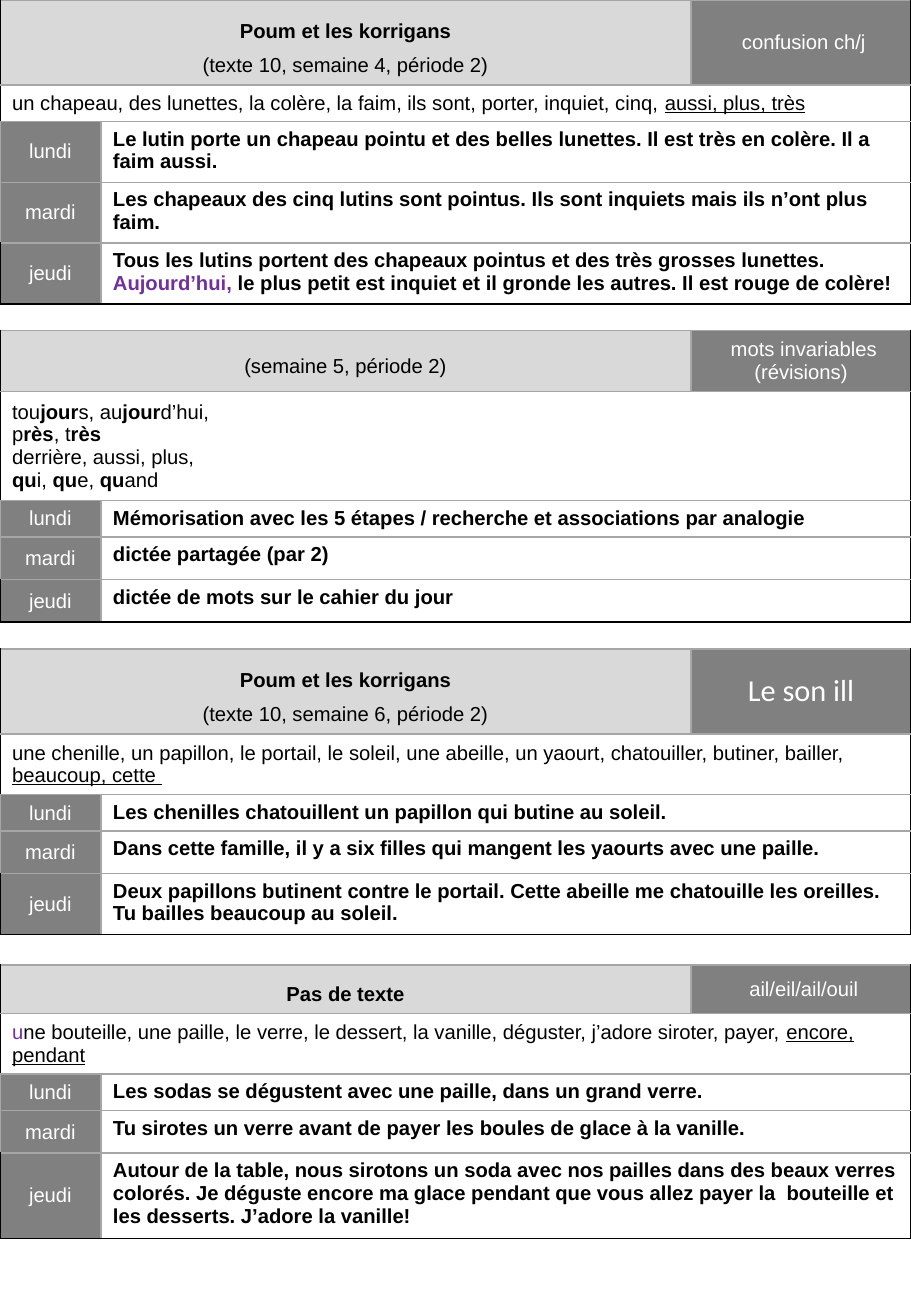
import dataclasses

import lxml.etree
import pptx
import pptx.dml.color
import pptx.enum.text
import pptx.oxml.ns
import pptx.util

Inches = pptx.util.Inches
Pt = pptx.util.Pt


@dataclasses.dataclass(frozen=True)
class Theme:
    black: str = "000000"
    white: str = "FFFFFF"
    light: str = "D9D9D9"
    dark: str = "808080"
    rule: str = "A6A6A6"
    accent: str = "7030A0"
    font: str = "Arial"
    size: int = 12
    sound_font: str = "Calibri"
    sound_size: int = 18
    rule_width: int = 1


THEME = Theme()
DAYS = ("lundi", "mardi", "jeudi")
COLUMNS = (0.83, 4.86, 1.81)
BOLD, UNDERLINE, ACCENT = "bold", "underline", "accent"

# -- 
WEEKS = [
    {
        "top": 0,
        "rows": (0.7, 0.3, 0.5, 0.5, 0.5),
        "title": [[("Poum et les korrigans", BOLD)], "(texte 10, semaine 4, période 2)"],
        "topic": [" confusion ch/j"],
        "words": [[
            "un chapeau, des lunettes, la colère, la faim, ils sont, porter, inquiet, cinq, ",
            ("aussi, plus, très", UNDERLINE),
        ]],
        "dictations": [
            "Le lutin porte un chapeau pointu et des belles lunettes. Il est très en colère. Il a faim aussi.",
            "Les chapeaux des cinq lutins sont pointus. Ils sont inquiets mais ils n’ont plus faim.",
            [
                "Tous les lutins portent des chapeaux pointus et des très grosses lunettes. ",
                ("Aujourd’hui,", ACCENT),
                " le plus petit est inquiet et il gronde les autres. Il est rouge de colère!",
            ],
        ],
    },
    {
        "top": 2.72,
        "rows": (0.5, 0.9, 0.3, 0.35, 0.35),
        "title": ["(semaine 5, période 2)"],
        "topic": [" mots invariables", "(révisions)"],
        "words": [
            ["tou", ("jour", BOLD), "s, au", ("jour", BOLD), "d’hui,"],
            ["p", ("rès", BOLD), ", t", ("rès", BOLD)],
            "derrière, aussi, plus,",
            [("qu", BOLD), "i, ", ("qu", BOLD), "e, ", ("qu", BOLD), "and"],
        ],
        "dictations": [
            "Mémorisation avec les 5 étapes / recherche et associations par analogie",
            "dictée partagée (par 2)",
            "dictée de mots sur le cahier du jour",
        ],
    },
    {
        "top": 5.34,
        "rows": (0.7, 0.5, 0.3, 0.35, 0.5),
        "title": [[("Poum et les korrigans", BOLD)], "(texte 10, semaine 6, période 2)"],
        "topic": ["Le son ill"],
        "topic_font": (THEME.sound_font, THEME.sound_size),
        "words": [[
            "une chenille, un papillon, le portail, le soleil, une abeille, un yaourt, chatouiller, butiner, bailler, ",
            ("beaucoup, cette ", UNDERLINE),
        ]],
        "dictations": [
            "Les chenilles chatouillent un papillon qui butine au soleil.",
            "Dans cette famille, il y a six filles qui mangent les yaourts avec une paille.",
            "Deux papillons butinent contre le portail. Cette abeille me chatouille les oreilles. "
            "Tu bailles beaucoup au soleil.",
        ],
    },
    {
        "top": 7.94,
        "rows": (0.4, 0.5, 0.3, 0.35, 0.7),
        "title": [[("Pas de texte", BOLD)]],
        "topic": [" ail/eil/ail/ouil"],
        "words": [[
            ("u", ACCENT),
            "ne bouteille, une paille, le verre, le dessert, la vanille, déguster, j’adore siroter, payer, ",
            ("encore, pendant", UNDERLINE),
        ]],
        "dictations": [
            "Les sodas se dégustent avec une paille, dans un grand verre.",
            "Tu sirotes un verre avant de payer les boules de glace à la vanille.",
            "Autour de la table, nous sirotons un soda avec nos pailles dans des beaux verres colorés. "
            "Je déguste encore ma glace pendant que vous allez payer la  bouteille et les desserts. "
            "J’adore la vanille!",
        ],
    },
]


def rgb(color):
    return pptx.dml.color.RGBColor.from_string(color)


def add_border(cell, side, color):
    qn = pptx.oxml.ns.qn
    properties = cell._tc.get_or_add_tcPr()
    line = lxml.etree.SubElement(properties, qn(f"a:ln{side}"), w=str(Pt(THEME.rule_width)))
    fill = lxml.etree.SubElement(line, qn("a:solidFill"))
    lxml.etree.SubElement(fill, qn("a:srgbClr"), val=color)


def write_lines(cell, lines, color, bold, centred, spacing, font):
    for index, line in enumerate(lines):
        frame = cell.text_frame
        paragraph = frame.add_paragraph() if index else frame.paragraphs[0]
        paragraph.font.name, paragraph.font.size = font[0], Pt(font[1])
        paragraph.font.bold = bold
        paragraph.font.color.rgb = rgb(color)
        paragraph.line_spacing = spacing
        if centred:
            paragraph.alignment = pptx.enum.text.PP_ALIGN.CENTER
        for part in [line] if isinstance(line, str) else line:
            text, style = (part, None) if isinstance(part, str) else part
            run = paragraph.add_run()
            run.text = text
            if style == BOLD:
                run.font.bold = True
            elif style == UNDERLINE:
                run.font.underline = True
            elif style == ACCENT:
                run.font.color.rgb = rgb(THEME.accent)


def fill_block(table, row, first, last, lines, fill, color=THEME.black, bold=False,
               centred=False, spacing=1.0, top_anchored=False, font=(THEME.font, THEME.size)):
    origin = table.cell(row, first)
    if last > first:
        origin.merge(table.cell(row, last))
    edges = {
        "L": first == 0 and (row < 2 or row == len(table.rows) - 1),
        "R": last == len(COLUMNS) - 1,
        "T": False,
        "B": row == len(table.rows) - 1,
    }
    for column in range(first, last + 1):
        cell = table.cell(row, column)
        for side, outer in edges.items():
            add_border(cell, side, THEME.black if outer else THEME.rule)
        cell.fill.solid()
        cell.fill.fore_color.rgb = rgb(fill)
    anchors = pptx.enum.text.MSO_ANCHOR
    origin.vertical_anchor = anchors.TOP if top_anchored else anchors.MIDDLE
    write_lines(origin, lines, color, bold, centred, spacing, font)


def add_week(slide, week):
    heights = week["rows"]
    table = slide.shapes.add_table(
        len(heights), len(COLUMNS), 0, Inches(week["top"]),
        Inches(sum(COLUMNS)), Inches(sum(heights))).table
    table.first_row = table.horz_banding = False
    for column, width in zip(table.columns, COLUMNS):
        column.width = Inches(width)
    for row, height in zip(table.rows, heights):
        row.height = Inches(height)
    fill_block(table, 0, 0, 1, week["title"], THEME.light, centred=True, spacing=1.5)
    fill_block(table, 0, 2, 2, week["topic"], THEME.dark, THEME.white, centred=True,
               font=week.get("topic_font", (THEME.font, THEME.size)))
    fill_block(table, 1, 0, 2, week["words"], THEME.white)
    for row, (day, dictation) in enumerate(zip(DAYS, week["dictations"]), start=2):
        fill_block(table, row, 0, 0, [day], THEME.dark, THEME.white, centred=True)
        fill_block(table, row, 1, 2, [dictation], THEME.white, bold=True, top_anchored=True)


def main():
    presentation = pptx.Presentation()
    presentation.slide_width, presentation.slide_height = Inches(7.5), Inches(10.83)
    slide = presentation.slides.add_slide(presentation.slide_layouts[6])
    for week in WEEKS:
        add_week(slide, week)
    presentation.save("out.pptx")


if __name__ == "__main__":
    main()
